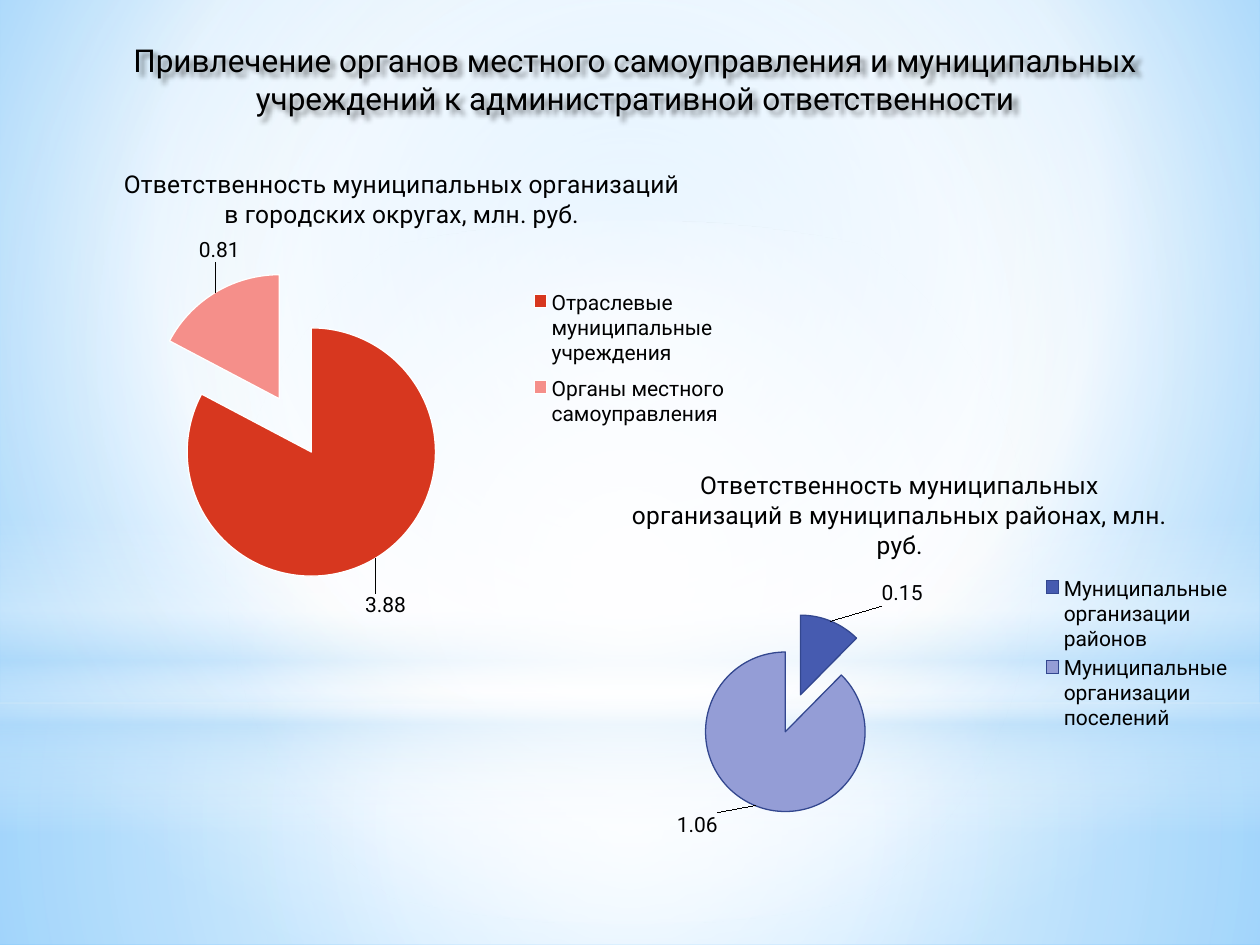
from pptx import Presentation
from pptx.chart.data import CategoryChartData
from pptx.dml.color import RGBColor
from pptx.enum.chart import XL_CHART_TYPE, XL_LABEL_POSITION as LABEL_AT, XL_LEGEND_POSITION as LEGEND_AT
from pptx.enum.shapes import MSO_SHAPE as SHAPE
from pptx.enum.text import MSO_ANCHOR as ANCHOR, PP_ALIGN as ALIGN
from pptx.oxml import parse_xml
from pptx.oxml.ns import nsdecls, qn
from pptx.util import Pt

COLORS = {
    "text": "000000", "white": "FFFFFF", "haze": "B4DCFA",
    "sky": "9ED5FF", "deep_sky": "5BB9FF",
    "red": "D7371F", "pink": "F58F8A",
    "blue": "465BB0", "lilac": "949DD6", "navy": "33478F",
}
CENTER = (50, 50, 50, 50)


def rgb(name):
    return RGBColor.from_string(COLORS[name])


def set_format(target, values):
    for name, value in values.items():
        setattr(target, name, value)


def place(element, before, *, inner=False, edge=True, **box):
    """Give a chart part a manual layout, in fractions of the chart."""
    for old in element.findall(qn("c:layout")):
        element.remove(old)
    target = '<c:layoutTarget val="inner"/>' if inner else ""
    modes = "".join(f'<c:{axis}Mode val="edge"/>' for axis in "xy") if edge else ""
    values = "".join(f'<c:{key} val="{value}"/>' for key, value in box.items())
    layout = parse_xml(f'<c:layout {nsdecls("c")}><c:manualLayout>{target}{modes}{values}'
                       '</c:manualLayout></c:layout>')
    following = next((child for child in element if child.tag in [qn(tag) for tag in before]), None)
    if following is None:
        element.append(layout)
    else:
        following.addprevious(layout)


class Deck:
    font = "Roboto"

    def __init__(self, width, height):
        self.prs = Presentation()
        set_format(self.prs, {"slide_width": Pt(width), "slide_height": Pt(height)})
        self.slide = self.prs.slides.add_slide(self.prs.slide_layouts[6])

    def style(self, font, size):
        set_format(font, {"name": self.font, "size": Pt(size), "bold": False})
        font.color.rgb = rgb("text")

    def gradient(self, fill, owner, stops, focus=None):
        """Fill with (position, colour, opacity) stops, round a focus or else downwards."""
        fill.gradient()
        stop_xml = "".join(
            f'<a:gs pos="{position * 1000}"><a:srgbClr val="{COLORS[color]}">'
            f'<a:alpha val="{opacity * 1000}"/></a:srgbClr></a:gs>'
            for position, color, opacity in stops)
        if focus:
            rect = " ".join(f'{side}="{value * 1000}"' for side, value in zip("ltrb", focus))
            direction = f'<a:path path="circle"><a:fillToRect {rect}/></a:path>'
        else:
            direction = '<a:lin ang="5400000" scaled="0"/>'
        old = owner.find(".//" + qn("a:gradFill"))
        old.getparent().replace(old, parse_xml(
            f'<a:gradFill {nsdecls("a")} rotWithShape="1"><a:gsLst>{stop_xml}</a:gsLst>'
            f'{direction}</a:gradFill>'))

    def background(self, stops, focus):
        self.gradient(self.slide.background.fill, self.slide.element, stops, focus)

    def glow(self, kind, box, stops, focus=None):
        shape = self.slide.shapes.add_shape(kind, *map(Pt, box))
        shape.shadow.inherit = False
        shape.line.fill.background()
        self.gradient(shape.fill, shape.element, stops, focus)

    def heading(self, box, text, size):
        heading = self.slide.shapes.add_textbox(*map(Pt, box))
        set_format(heading.text_frame, {"word_wrap": True, "vertical_anchor": ANCHOR.MIDDLE})
        paragraph = heading.text_frame.paragraphs[0]
        paragraph.alignment = ALIGN.CENTER
        run = paragraph.add_run()
        run.text = text
        self.style(run.font, size)
        heading.element.spPr.append(parse_xml(
            f'<a:effectLst {nsdecls("a")}><a:outerShdw blurRad="38100" dist="38100" dir="2700000">'
            '<a:srgbClr val="000000"><a:alpha val="45000"/></a:srgbClr></a:outerShdw></a:effectLst>'))

    def pie(self, box, title, slices, plot, legend, outline):
        """Draw a pie from (category, value, colour, label shift) slices."""
        data = CategoryChartData()
        data.categories = [category for category, *_ in slices]
        data.add_series("Series 1", [value for _, value, *_ in slices])
        chart = self.slide.shapes.add_chart(XL_CHART_TYPE.PIE, *map(Pt, box), data).chart
        self.style(chart.font, 12)
        set_format(chart, {"has_title": True, "has_legend": True})
        chart.chart_title.text_frame.text = title
        self.style(chart.chart_title.text_frame.paragraphs[0].runs[0].font, 14)
        set_format(chart.legend, {"position": LEGEND_AT.RIGHT, "include_in_layout": False})
        self.style(chart.legend.font, 12)
        place(chart.legend._element, ["c:overlay", "c:spPr", "c:txPr"], **legend)

        pie_plot = chart.plots[0]
        set_format(pie_plot, {"vary_by_categories": True, "has_data_labels": True})
        set_format(pie_plot.data_labels, {"show_value": True, "number_format": "0.00",
                                          "number_format_is_linked": False,
                                          "position": LABEL_AT.OUTSIDE_END})
        self.style(pie_plot.data_labels.font, 12)
        plot_area = pie_plot._element.getparent()
        place(plot_area, ["c:pieChart"], inner=True, **plot)

        series = pie_plot.series[0]
        for index, (_, _, color, shift) in enumerate(slices):
            point = series.points[index]
            point.format.fill.solid()
            point.format.fill.fore_color.rgb = rgb(color)
            point.format.line.color.rgb = rgb(outline)
            point.format.line.width = Pt(0.75)
            label = point.data_label
            self.style(label.font, 12)
            label.position = LABEL_AT.OUTSIDE_END
            label_xml = series._element.find(qn("c:dLbls")).findall(qn("c:dLbl"))[index]
            place(label_xml, ["c:tx", "c:numFmt", "c:spPr", "c:txPr", "c:dLblPos"],
                  edge=False, x=shift[0], y=shift[1])
        series._element.find(qn("c:dPt")).addprevious(
            parse_xml(f'<c:explosion {nsdecls("c")} val="25"/>'))


def main():
    deck = Deck(720, 540)
    deck.background([(0, "sky", 100), (60, "white", 100), (100, "deep_sky", 100)], (20, 10, 20, 60))
    horizon = 401.76
    deck.glow(SHAPE.RECTANGLE, (0, horizon, 720, 540 - horizon),
              [(0, "white", 91), (37, "white", 76), (100, "haze", 79)], CENTER)
    deck.glow(SHAPE.RECTANGLE, (0, 0, 720, horizon),
              [(0, "white", 89), (48, "white", 62), (100, "haze", 79)], CENTER)
    deck.glow(SHAPE.RECTANGLE, (0, 296.64, 720, 180),
              [(0, "white", 0), (29, "white", 30), (45, "haze", 40),
               (55, "white", 26), (65, "haze", 60), (100, "white", 0)])
    deck.glow(SHAPE.OVAL, (0, 126, 720, horizon), [(0, "white", 100), (56, "white", 0)], CENTER)

    deck.heading((33, 16, 660, 58), "Привлечение органов местного самоуправления и муниципальных "
                 "учреждений к административной ответственности", 18)
    deck.pie((26.64, 83.52, 406.08, 272.88),
             "Ответственность муниципальных организаций в городских округах, млн. руб.",
             [("Отраслевые муниципальные учреждения", 3.88, "red", (-0.02, 0.06)),
              ("Органы местного самоуправления", 0.81, "pink", (0.04, -0.05))],
             plot={"x": 0.13, "y": 0.26, "w": 0.44, "h": 0.65},
             legend={"x": 0.67, "y": 0.28, "w": 0.3, "h": 0.33}, outline="white")
    deck.pie((317.52, 256.32, 393.12, 234.72),
             "Ответственность муниципальных организаций в муниципальных районах, млн. руб.",
             [("Муниципальные организации районов", 0.15, "blue", (0.07, -0.02)),
              ("Муниципальные организации поселений", 1.06, "lilac", (-0.05, 0))],
             plot={"x": 0.2, "y": 0.4, "w": 0.29, "h": 0.49},
             legend={"x": 0.7, "y": 0.3, "w": 0.29, "h": 0.4}, outline="navy")
    deck.prs.save("out.pptx")


if __name__ == "__main__":
    main()
